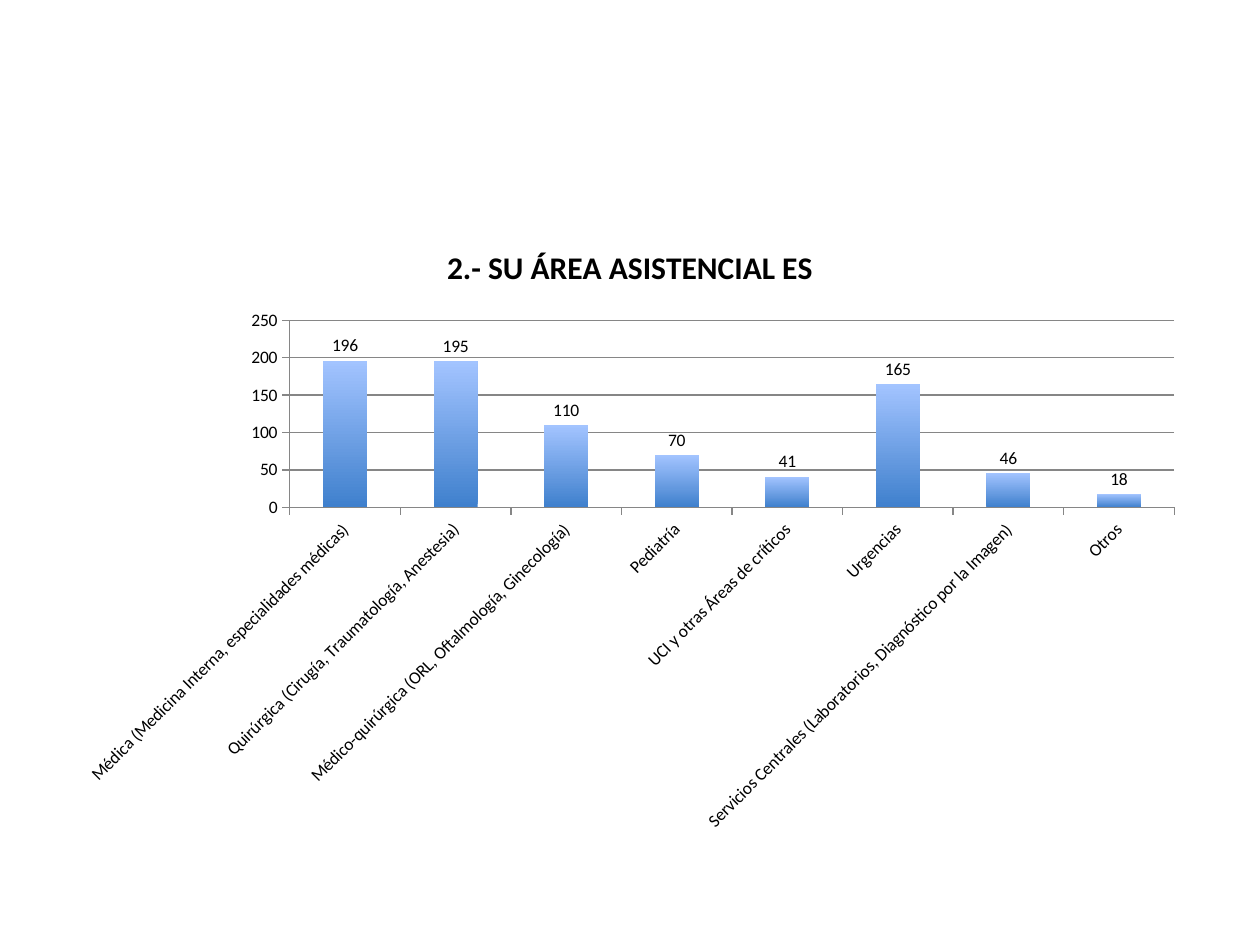
import pptx
import pptx.chart.data
import pptx.dml.color
import pptx.enum.chart
import pptx.oxml
import pptx.oxml.ns
import pptx.util

BLACK = pptx.dml.color.RGBColor(0x00, 0x00, 0x00)
GRAY = pptx.dml.color.RGBColor(0x86, 0x86, 0x86)
BAR_TOP = pptx.dml.color.RGBColor(0xA3, 0xC4, 0xFF)
BAR_BOTTOM = pptx.dml.color.RGBColor(0x3F, 0x80, 0xCD)
FONT = "Calibri"
TITLE = "2.- SU ÁREA ASISTENCIAL ES"
AREAS = {
    "Médica (Medicina Interna, especialidades médicas)": 196,
    "Quirúrgica (Cirugía, Traumatología, Anestesia)": 195,
    "Médico-quirúrgica (ORL, Oftalmología, Ginecología)": 110,
    "Pediatría": 70,
    "UCI y otras Áreas de críticos": 41,
    "Urgencias": 165,
    "Servicios Centrales (Laboratorios, Diagnóstico por la Imagen)": 46,
    "Otros": 18,
}


def format_font(font, size=10, bold=False, color=BLACK):
    """Apply the slide's typeface with the given size, weight and colour."""
    font.name = FONT
    font.size = pptx.util.Pt(size)
    font.bold = bold
    font.color.rgb = color


def write_text(text_frame, text, **font_format):
    """Write one formatted run of text into a text frame."""
    run = text_frame.paragraphs[0].add_run()
    run.text = text
    format_font(run.font, **font_format)


def format_line(line):
    """Draw a thin gray line."""
    line.color.rgb = GRAY
    line.width = pptx.util.Pt(0.75)


def format_axis(axis):
    """Give an axis outside ticks, black labels and a gray line."""
    axis.major_tick_mark = pptx.enum.chart.XL_TICK_MARK.OUTSIDE
    axis.minor_tick_mark = pptx.enum.chart.XL_TICK_MARK.NONE
    format_font(axis.tick_labels.font)
    format_line(axis.format.line)


def set_plot_layout(chart, x, y, w, h):
    """Place the inner plot area by shares of the chart's size."""
    plot_area = chart._chartSpace.chart.plotArea
    for layout in plot_area.findall(pptx.oxml.ns.qn("c:layout")):
        plot_area.remove(layout)
    shares = "".join(
        f'<c:{name} val="{value}"/>'
        for name, value in {"x": x, "y": y, "w": w, "h": h}.items()
    )
    plot_area.insert(0, pptx.oxml.parse_xml(
        f'<c:layout {pptx.oxml.ns.nsdecls("c")}><c:manualLayout>'
        '<c:layoutTarget val="inner"/><c:xMode val="edge"/><c:yMode val="edge"/>'
        f'{shares}</c:manualLayout></c:layout>'
    ))


def format_columns(plot):
    """Fill the columns with a vertical gradient and show their values."""
    plot.gap_width = 150
    plot.vary_by_categories = False
    fill = plot.series[0].format.fill
    fill.gradient()
    fill.gradient_angle = 90
    for stop, color in zip(fill.gradient_stops, (BAR_BOTTOM, BAR_TOP)):
        stop.color.rgb = color
    labels = plot.series[0].data_labels
    labels.show_value = True
    labels.position = pptx.enum.chart.XL_LABEL_POSITION.OUTSIDE_END
    format_font(labels.font)


def add_area_chart(slide, left, top, width, height):
    """Add the column chart of answers by care area."""
    data = pptx.chart.data.CategoryChartData()
    data.categories = list(AREAS)
    data.add_series(TITLE, list(AREAS.values()))
    chart = slide.shapes.add_chart(
        pptx.enum.chart.XL_CHART_TYPE.COLUMN_CLUSTERED, left, top, width, height, data
    ).chart
    format_font(chart.font)
    chart.has_legend = False
    chart.has_title = True
    write_text(chart.chart_title.text_frame, TITLE, size=18, bold=True)
    chart.chart_title.include_in_layout = False
    format_columns(chart.plots[0])
    for axis in (chart.category_axis, chart.value_axis):
        format_axis(axis)
    body = chart.category_axis._element.txPr.find(pptx.oxml.ns.qn("a:bodyPr"))
    body.set("rot", "-2700000")
    body.set("vert", "horz")
    chart.value_axis.minimum_scale = 0
    chart.value_axis.maximum_scale = 250
    chart.value_axis.major_unit = 50
    chart.value_axis.has_major_gridlines = True
    format_line(chart.value_axis.major_gridlines.format.line)
    set_plot_layout(chart, 0.2, 0.16, 0.78, 0.3)


def main():
    """Build and save the slide."""
    presentation = pptx.Presentation()
    presentation.slide_width = pptx.util.Inches(10)
    presentation.slide_height = pptx.util.Inches(7.5)
    slide = presentation.slides.add_slide(presentation.slide_layouts[6])
    width, height = presentation.slide_width, presentation.slide_height
    add_area_chart(
        slide, int(width * 0.05), int(height * 7 / 30), int(width * 0.9), int(height * 0.66)
    )
    presentation.save("out.pptx")


if __name__ == "__main__":
    main()
